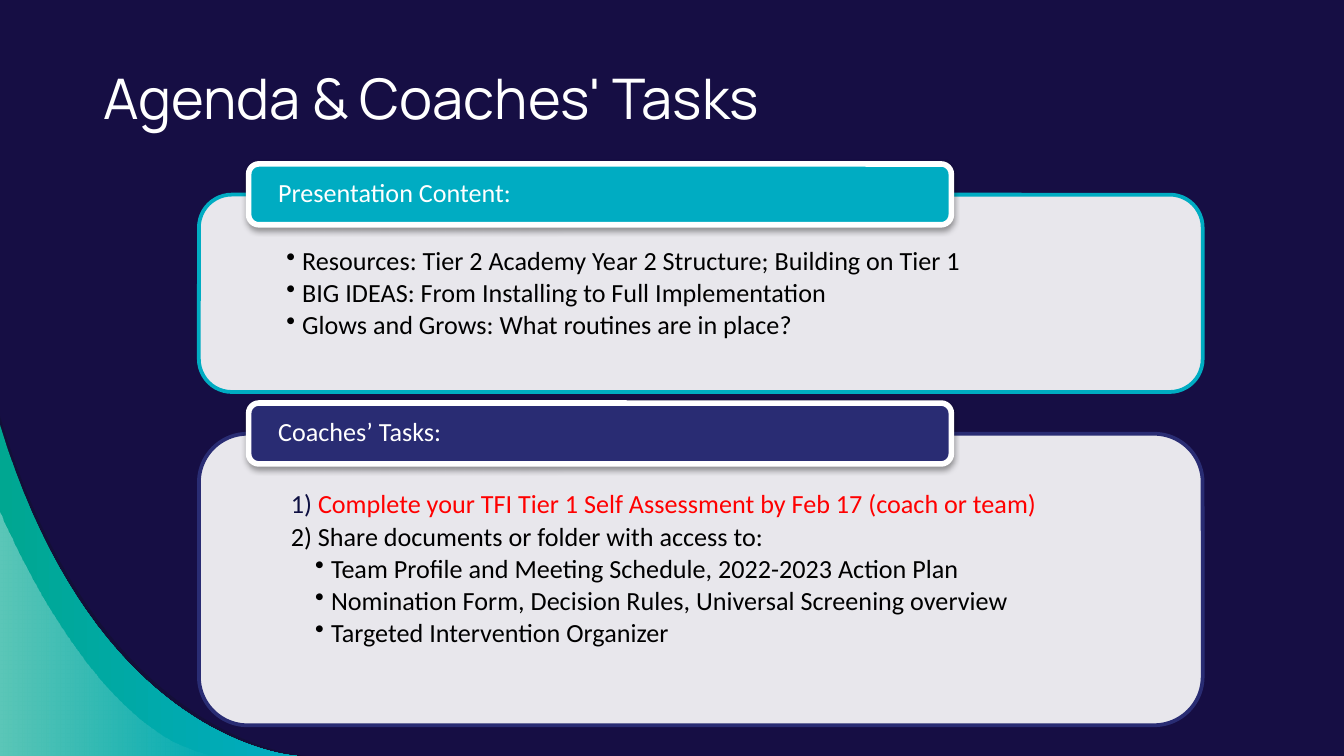
"""Build the agenda slide with two tabbed cards and a curved corner."""
from lxml.etree import SubElement
from pptx import Presentation
from pptx.dml.color import RGBColor as Rgb
from pptx.enum.shapes import MSO_SHAPE as Kind
from pptx.enum.text import MSO_ANCHOR as Anchor, PP_ALIGN as Align
from pptx.oxml.ns import qn
from pptx.util import Cm, Pt

NIGHT = Rgb(0x16, 0x0E, 0x44)
SHADE = Rgb(0x12, 0x10, 0x2F)
INK = Rgb(0x0D, 0x0F, 0x41)
NAVY = Rgb(0x29, 0x2C, 0x73)
TEAL = Rgb(0x00, 0xAC, 0xC2)
GREEN = Rgb(0x00, 0xA7, 0x91)
WHITE = Rgb(0xFF, 0xFF, 0xFF)
BLACK = Rgb(0, 0, 0)
RED = Rgb(0xFF, 0, 0)

WIDE, HIGH = 25.4, 14.29
TITLE = "Agenda & Coaches' Tasks"
HEAD, BODY = "Manrope", "Calibri"

CARDS = [
    ("Presentation Content:", TEAL, 3.68, 3.73, [
        (0.3, True, [("Resources: Tier 2 Academy Year 2 Structure; Building on Tier 1", BLACK)]),
        (0.3, True, [("BIG IDEAS: From Installing to Full Implementation", BLACK)]),
        (0.3, True, [("Glows and Grows: What routines are in place?", BLACK)]),
    ]),
    ("Coaches’ Tasks:", NAVY, 8.2, 5.51, [
        (0.3, False, [("1) ", INK),
                      ("Complete your TFI Tier 1 Self Assessment by Feb 17 (coach or team)", RED)]),
        (0.3, False, [("2) Share documents or folder with access to:", BLACK)]),
        (0.76, True, [("Team Profile and Meeting Schedule, 2022-2023 Action Plan", BLACK)]),
        (0.76, True, [("Nomination Form, Decision Rules, Universal Screening overview", BLACK)]),
        (0.76, True, [("Targeted Intervention Organizer", BLACK)]),
    ]),
]

CURVES = [
    ([(0, 7.87), (1.85, 14.07), (5.77, HIGH), (5.77, HIGH)], [SHADE], [54]),
    ([(0, 8.03), (1.83, 14.1), (5.61, HIGH), (5.61, HIGH)], [GREEN, TEAL], [100, 100]),
    ([(0, 9.65), (0, 9.65), (1.75, 14), (4.11, HIGH)], [WHITE, WHITE], [36, 0]),
]
STEPS = 40
HANG = 0.3


def fade(shape, alphas):
    colors = shape._element.spPr.iter(qn("a:srgbClr"))
    for color, alpha in zip(list(colors), alphas):
        SubElement(color, qn("a:alpha"), val=str(alpha * 1000))


def bend(ends, t):
    parts = ((1 - t) ** 3, 3 * t * (1 - t) ** 2, 3 * t * t * (1 - t), t ** 3)
    return tuple(Cm(sum(k * end[axis] for k, end in zip(parts, ends)))
                 for axis in (0, 1))


def add_curve(slide, ends, colors, alphas):
    dots = [bend(ends, i / STEPS) for i in range(STEPS + 1)]
    pen = slide.shapes.build_freeform(*dots[0])
    pen.add_line_segments(dots[1:] + [(0, Cm(HIGH))], close=True)
    shape = pen.convert_to_shape()
    shape.shadow.inherit = False
    shape.line.fill.background()
    if len(colors) == 1:
        shape.fill.solid()
        shape.fill.fore_color.rgb = colors[0]
    else:
        shape.fill.gradient()
        shape.fill.gradient_angle = 0
        for stop, color in zip(shape.fill.gradient_stops, colors):
            stop.color.rgb = color
    fade(shape, alphas)


def add_panel(slide, area, fill, line, width):
    shape = slide.shapes.add_shape(Kind.ROUNDED_RECTANGLE, *map(Cm, area))
    shape.shadow.inherit = False
    shape.fill.solid()
    shape.fill.fore_color.rgb = fill
    shape.line.color.rgb = line
    shape.line.width = Pt(width)
    return shape


def set_frame(shape, insets, anchor):
    frame = shape.text_frame
    frame.word_wrap = True
    frame.vertical_anchor = anchor
    (frame.margin_left, frame.margin_top,
     frame.margin_right, frame.margin_bottom) = map(Cm, insets)
    return frame


def add_run(para, text, font, size, color):
    run = para.add_run()
    run.text = text
    run.font.name = font
    run.font.size = Pt(size)
    run.font.color.rgb = color


def set_para(para, after):
    para.alignment = Align.LEFT
    para.line_spacing = 0.9
    para.space_after = Pt(after)


def set_list(para, indent, dot):
    props = para._p.get_or_add_pPr()
    props.set("marL", str(Cm(indent)))
    props.set("indent", str(-Cm(HANG)))
    if dot:
        color = SubElement(props, qn("a:buClr"))
        SubElement(color, qn("a:srgbClr"), val=str(BLACK))
        SubElement(props, qn("a:buChar"), char="•")
    else:
        SubElement(props, qn("a:buNone"))


def add_shadow(shape):
    effects = shape._element.spPr.find(qn("a:effectLst"))
    outer = SubElement(effects, qn("a:outerShdw"), blurRad=str(Pt(3.1)),
                       dist=str(Pt(1.6)), dir="5400000", rotWithShape="0")
    color = SubElement(outer, qn("a:srgbClr"), val=str(BLACK))
    SubElement(color, qn("a:alpha"), val="38000")


def add_card(slide, label, color, top, high, items):
    card = add_panel(slide, (3.76, top, 18.97, high), WHITE, color, 2)
    fade(card, [90])
    frame = set_frame(card, (1.47, 0.82, 1.47, 0.28), Anchor.TOP)
    for i, (indent, dot, runs) in enumerate(items):
        para = frame.add_paragraph() if i else frame.paragraphs[0]
        set_para(para, 2.1)
        set_list(para, indent, dot)
        for text, tint in runs:
            add_run(para, text, BODY, 14, tint)
    tab = add_panel(slide, (4.7, top - 0.58, 13.28, 1.15), color, WHITE, 3)
    add_shadow(tab)
    para = set_frame(tab, (0.5, 0, 0.5, 0), Anchor.MIDDLE).paragraphs[0]
    set_para(para, 4.9)
    add_run(para, label, BODY, 14, WHITE)


def main():
    deck = Presentation()
    deck.slide_width, deck.slide_height = Cm(WIDE), Cm(HIGH)
    slide = deck.slides.add_slide(deck.slide_layouts[6])
    slide.background.fill.solid()
    slide.background.fill.fore_color.rgb = NIGHT
    for curve in CURVES:
        add_curve(slide, *curve)
    for card in CARDS:
        add_card(slide, *card)
    title = slide.shapes.add_textbox(*map(Cm, (1.7, 0.97, 19.53, 1.75)))
    frame = set_frame(title, (0.25,) * 4, Anchor.MIDDLE)
    add_run(frame.paragraphs[0], TITLE, HEAD, 30, WHITE)
    deck.save("out.pptx")


if __name__ == "__main__":
    main()
